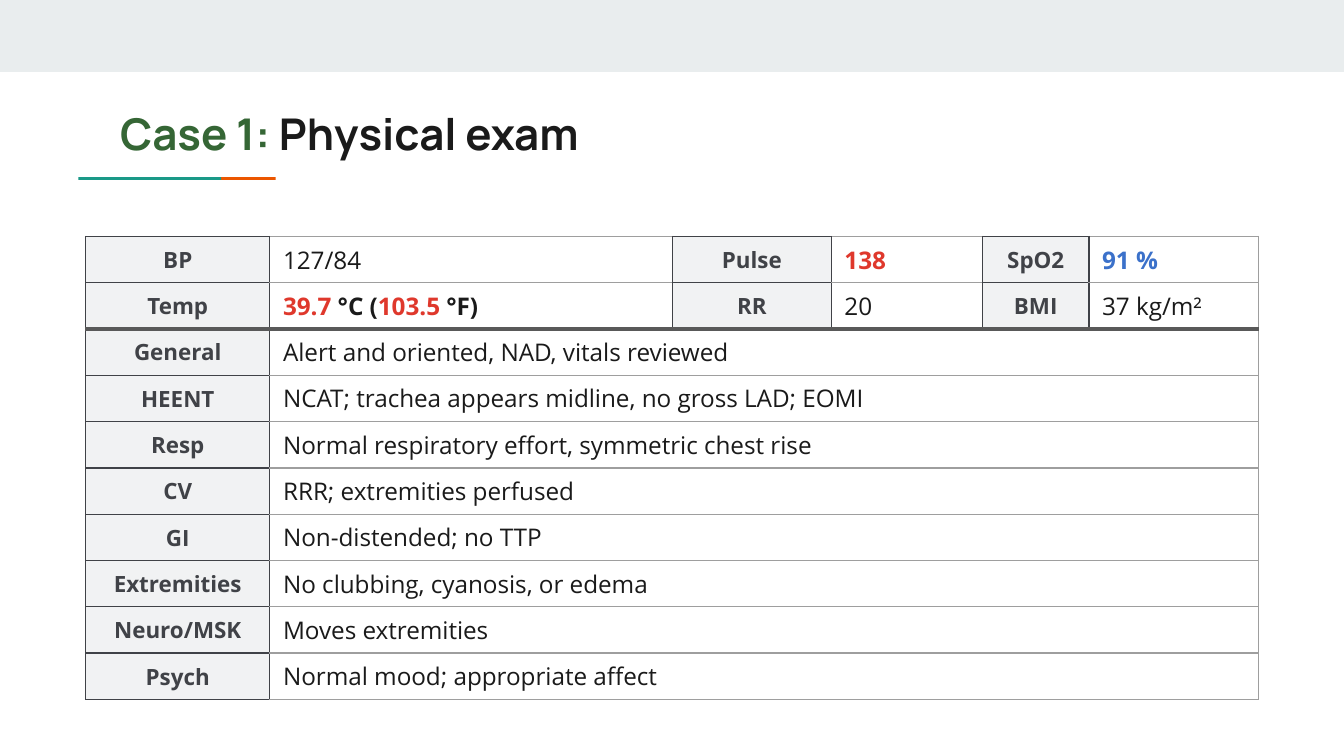
import pptx
import pptx.dml.color
import pptx.enum.shapes
import pptx.enum.text
import pptx.oxml
import pptx.oxml.ns
import pptx.util
from pptx.util import Cm

INK, SLATE, GREY, RULE = "1A1A1A", "404247", "9E9E9E", "595959"
RED, BLUE = "DF382C", "3B71CA"


def rgb(hex_colour):
    return pptx.dml.color.RGBColor.from_string(hex_colour)


def write(paragraph, text, font="Open Sans", size=13, colour=INK, bold=False):
    run = paragraph.add_run()
    run.text = text
    run.font.name = font
    run.font.size = pptx.util.Pt(size)
    run.font.bold = bold
    run.font.color.rgb = rgb(colour)


deck = pptx.Presentation()
deck.slide_width, deck.slide_height = Cm(25.4), Cm(14.29)
slide = deck.slides.add_slide(deck.slide_layouts[6])

# Top band, then the title rule: the teal bar overlaps the orange one
for left, top, width, height, colour in [
    (0, 0, 25.4, 1.36, "E9EDEE"),
    (2.51, 3.35, 2.7, 0.05, "EB5600"),
    (1.48, 3.35, 2.7, 0.05, "1A9988"),
]:
    bar = slide.shapes.add_shape(
        pptx.enum.shapes.MSO_SHAPE.RECTANGLE, Cm(left), Cm(top), Cm(width), Cm(height)
    )
    bar.shadow.inherit = False
    bar.fill.solid()
    bar.fill.fore_color.rgb = rgb(colour)
    bar.line.fill.background()

title = slide.shapes.add_textbox(Cm(2.02), Cm(1.77), Cm(21.36), Cm(1.5)).text_frame
title.word_wrap = True
title.margin_left = title.margin_right = Cm(0.25)
title.margin_top = title.margin_bottom = Cm(0.25)
for text, colour in [("Case 1:", "356635"), (" Physical exam", INK)]:
    write(title.paragraphs[0], text, font="Manrope", size=23.4, colour=colour, bold=True)

# A value is a list of (text, colour, bold) runs
vitals = [
    [("BP", [("127/84", INK, False)]),
     ("Pulse", [("138", RED, True)]),
     ("SpO2", [("91 %", BLUE, True)])],
    [("Temp", [("39.7", RED, True), (" °C (", INK, True),
               ("103.5", RED, True), (" °F)", INK, True)]),
     ("RR", [("20", INK, False)]),
     ("BMI", [("37 kg/m²", INK, False)])],
]
findings = [
    ("General", "Alert and oriented, NAD, vitals reviewed"),
    ("HEENT", "NCAT; trachea appears midline, no gross LAD; EOMI"),
    ("Resp", "Normal respiratory effort, symmetric chest rise"),
    ("CV", "RRR; extremities perfused"),
    ("GI", "Non-distended; no TTP"),
    ("Extremities", "No clubbing, cyanosis, or edema"),
    ("Neuro/MSK", "Moves extremities"),
    ("Psych", "Normal mood; appropriate affect"),
]
exam_rows = vitals + [[(system, [(finding, INK, False)])] for system, finding in findings]
column_widths = [3.48, 7.61, 3.0, 2.86, 2.01, 3.21]
last_column = len(column_widths) - 1
exam_height = 8.75

exam = slide.shapes.add_table(
    len(exam_rows), len(column_widths), Cm(1.62), Cm(4.47),
    Cm(sum(column_widths)), Cm(exam_height),
).table
exam.first_row = exam.horz_banding = False
for column, width in zip(exam.columns, column_widths):
    column.width = Cm(width)

for r, pairs in enumerate(exam_rows):
    exam.rows[r].height = Cm(exam_height / len(exam_rows))
    is_merged = len(pairs) == 1
    if is_merged:
        exam.cell(r, 1).merge(exam.cell(r, last_column))

    for c in range(len(column_widths)):
        cell = exam.cell(r, c)
        is_label = c % 2 == 0 and c // 2 < len(pairs)
        reaches_right = c == last_column or (is_merged and c > 0)
        edge = SLATE if is_label else GREY
        borders = {
            "L": (SLATE, 0.75),
            "R": (GREY if reaches_right else SLATE, 0.75),
            "T": (RULE, 2.25) if r == len(vitals) else (edge, 0.75),
            "B": (RULE, 2.25) if r == len(vitals) - 1 else (edge, 0.75),
        }
        for side, (colour, points) in borders.items():
            cell._tc.get_or_add_tcPr().append(pptx.oxml.parse_xml(
                f'<a:ln{side} {pptx.oxml.ns.nsdecls("a")} w="{pptx.util.Pt(points)}">'
                f'<a:solidFill><a:srgbClr val="{colour}"/></a:solidFill></a:ln{side}>'
            ))
        cell.fill.background()
        if is_label:
            cell.fill.solid()
            cell.fill.fore_color.rgb = rgb("F1F2F3")

    for i, (label, value) in enumerate(pairs):
        label_cell, value_cell = exam.cell(r, 2 * i), exam.cell(r, 2 * i + 1)
        for cell in (label_cell, value_cell):
            cell.margin_left = cell.margin_right = Cm(0.25)
            cell.margin_top = cell.margin_bottom = Cm(0.13)
        label_cell.vertical_anchor = pptx.enum.text.MSO_ANCHOR.MIDDLE
        heading = label_cell.text_frame.paragraphs[0]
        heading.alignment = pptx.enum.text.PP_ALIGN.CENTER
        write(heading, label, size=12, colour=SLATE, bold=True)
        reading = value_cell.text_frame.paragraphs[0]
        reading.space_after = pptx.util.Pt(12)
        for text, colour, bold in value:
            write(reading, text, colour=colour, bold=bold)

deck.save("out.pptx")
